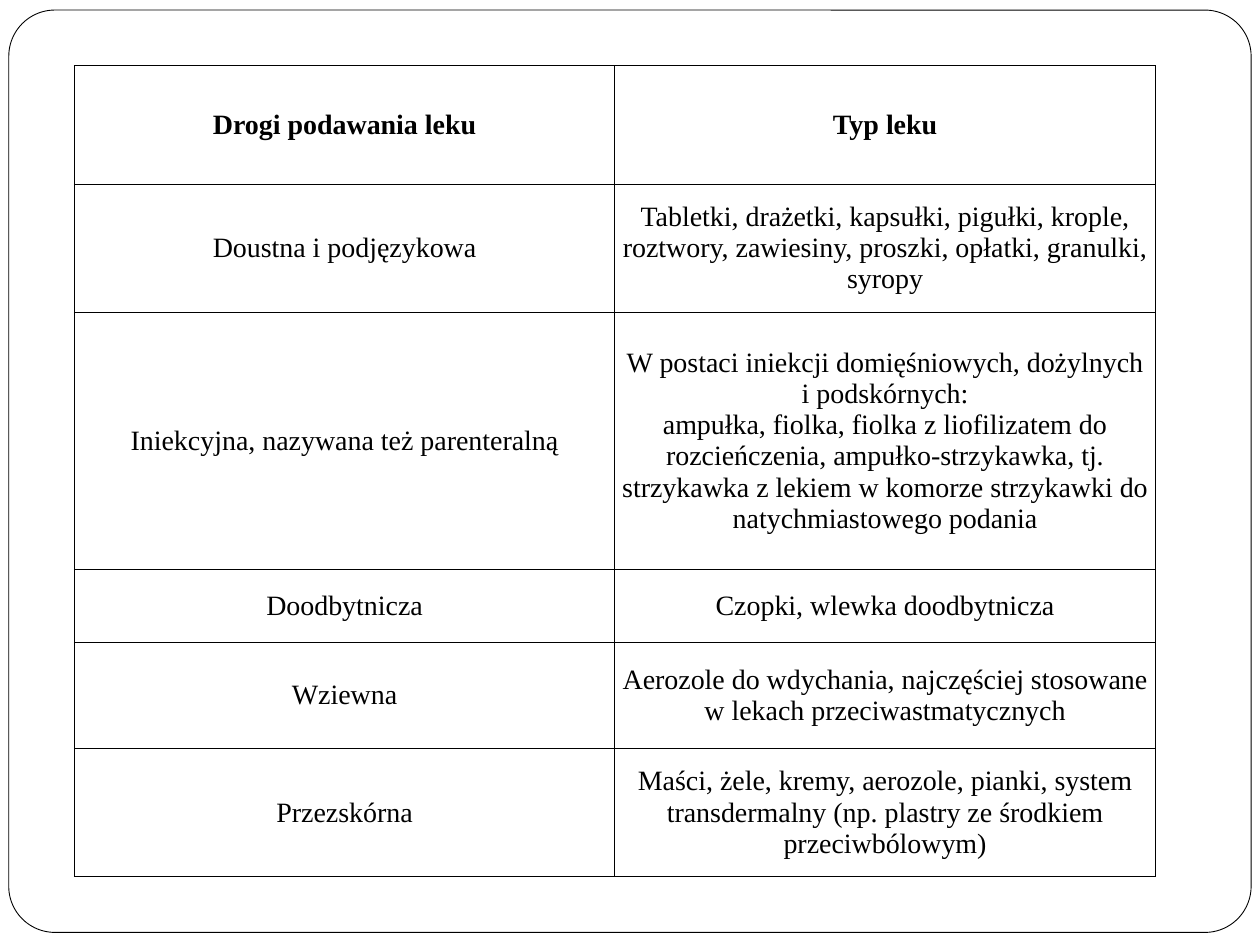
"""Build a slide with a table of drug administration routes and drug types."""
from dataclasses import dataclass

from lxml import etree
from pptx import Presentation
from pptx.dml.color import RGBColor
from pptx.enum.shapes import MSO_SHAPE
from pptx.enum.text import MSO_ANCHOR, PP_ALIGN
from pptx.oxml.ns import qn
from pptx.util import Inches, Pt

ROUNDED = MSO_SHAPE.ROUNDED_RECTANGLE
CENTER = PP_ALIGN.CENTER
MIDDLE = MSO_ANCHOR.MIDDLE

HEADINGS = ("Drogi podawania leku", "Typ leku")
ROUTES = (
    ("Doustna i podjęzykowa",
     "Tabletki, drażetki, kapsułki, pigułki, krople, roztwory, zawiesiny, "
     "proszki, opłatki, granulki, syropy"),
    ("Iniekcyjna, nazywana też parenteralną",
     "W postaci iniekcji domięśniowych, dożylnych i podskórnych:\n"
     "ampułka, fiolka, fiolka z liofilizatem do rozcieńczenia, "
     "ampułko-strzykawka, tj. strzykawka z lekiem w komorze strzykawki "
     "do natychmiastowego podania"),
    ("Doodbytnicza", "Czopki, wlewka doodbytnicza"),
    ("Wziewna",
     "Aerozole do wdychania, najczęściej stosowane w lekach "
     "przeciwastmatycznych"),
    ("Przezskórna",
     "Maści, żele, kremy, aerozole, pianki, system transdermalny "
     "(np. plastry ze środkiem przeciwbólowym)"),
)
ROW_HEIGHTS = (0.94, 1.02, 2.04, 0.58, 0.84, 1.02)
COLUMN_WIDTHS = (4.29, 4.29)


@dataclass(frozen=True)
class Theme:
    """Colours, font and sizes of the slide."""
    ink: str = "000000"
    paper: str = "FFFFFF"
    font: str = "Times New Roman"
    body_size: float = 16
    rule_width: float = 0.5


def write_text(frame, text, *, theme, bold=False, align=CENTER):
    """Write each line of text as a formatted paragraph."""
    frame.text = text
    for paragraph in frame.paragraphs:
        paragraph.alignment = align
        for run in paragraph.runs:
            run.font.name = theme.font
            run.font.size = Pt(theme.body_size)
            run.font.bold = bold
            run.font.color.rgb = RGBColor.from_string(theme.ink)


class SlideBuilder:
    """Draw elements on one slide in one theme."""

    def __init__(self, slide, theme):
        """Keep the slide and its theme."""
        self.slide = slide
        self.theme = theme

    def frame(self, left, top, width, height, corner):
        """Draw the rounded page frame."""
        border = self.slide.shapes.add_shape(
            ROUNDED, Inches(left), Inches(top), Inches(width), Inches(height))
        border.adjustments[0] = corner
        border.shadow.inherit = False
        border.fill.solid()
        border.fill.fore_color.rgb = RGBColor.from_string(self.theme.paper)
        border.line.color.rgb = RGBColor.from_string(self.theme.ink)
        border.line.width = Pt(self.theme.rule_width)

    def table(self, left, top, widths, heights, rows):
        """Draw a ruled table whose first row is bold."""
        grid = self.slide.shapes.add_table(
            len(heights), len(widths), Inches(left), Inches(top),
            Inches(sum(widths)), Inches(sum(heights))).table
        for column, width in zip(grid.columns, widths):
            column.width = Inches(width)
        for index, (height, texts) in enumerate(zip(heights, rows)):
            grid.rows[index].height = Inches(height)
            for cell, text in zip(grid.rows[index].cells, texts):
                self.cell(cell, text, bold=index == 0)

    def cell(self, cell, text, bold):
        """Rule, fill and write one table cell."""
        cell.margin_left = cell.margin_right = Inches(0.04)
        cell.margin_top = cell.margin_bottom = 0
        cell.vertical_anchor = MIDDLE
        properties = cell._tc.get_or_add_tcPr()
        for side in ("lnL", "lnR", "lnT", "lnB"):
            rule = etree.SubElement(properties, qn(f"a:{side}"),
                                    w=str(Pt(self.theme.rule_width)))
            paint = etree.SubElement(rule, qn("a:solidFill"))
            etree.SubElement(paint, qn("a:srgbClr"), val=self.theme.ink)
        cell.fill.solid()
        cell.fill.fore_color.rgb = RGBColor.from_string(self.theme.paper)
        write_text(cell.text_frame, text, theme=self.theme, bold=bold)


def main():
    """Create and save the presentation."""
    presentation = Presentation()
    presentation.slide_width = Inches(10)
    presentation.slide_height = Inches(7.5)
    slide = presentation.slides.add_slide(presentation.slide_layouts[6])
    builder = SlideBuilder(slide, Theme())
    builder.frame(0.07, 0.08, 9.86, 7.32, corner=0.05)
    builder.table(0.59, 0.52, COLUMN_WIDTHS, ROW_HEIGHTS, (HEADINGS, *ROUTES))
    presentation.save("out.pptx")


if __name__ == "__main__":
    main()
